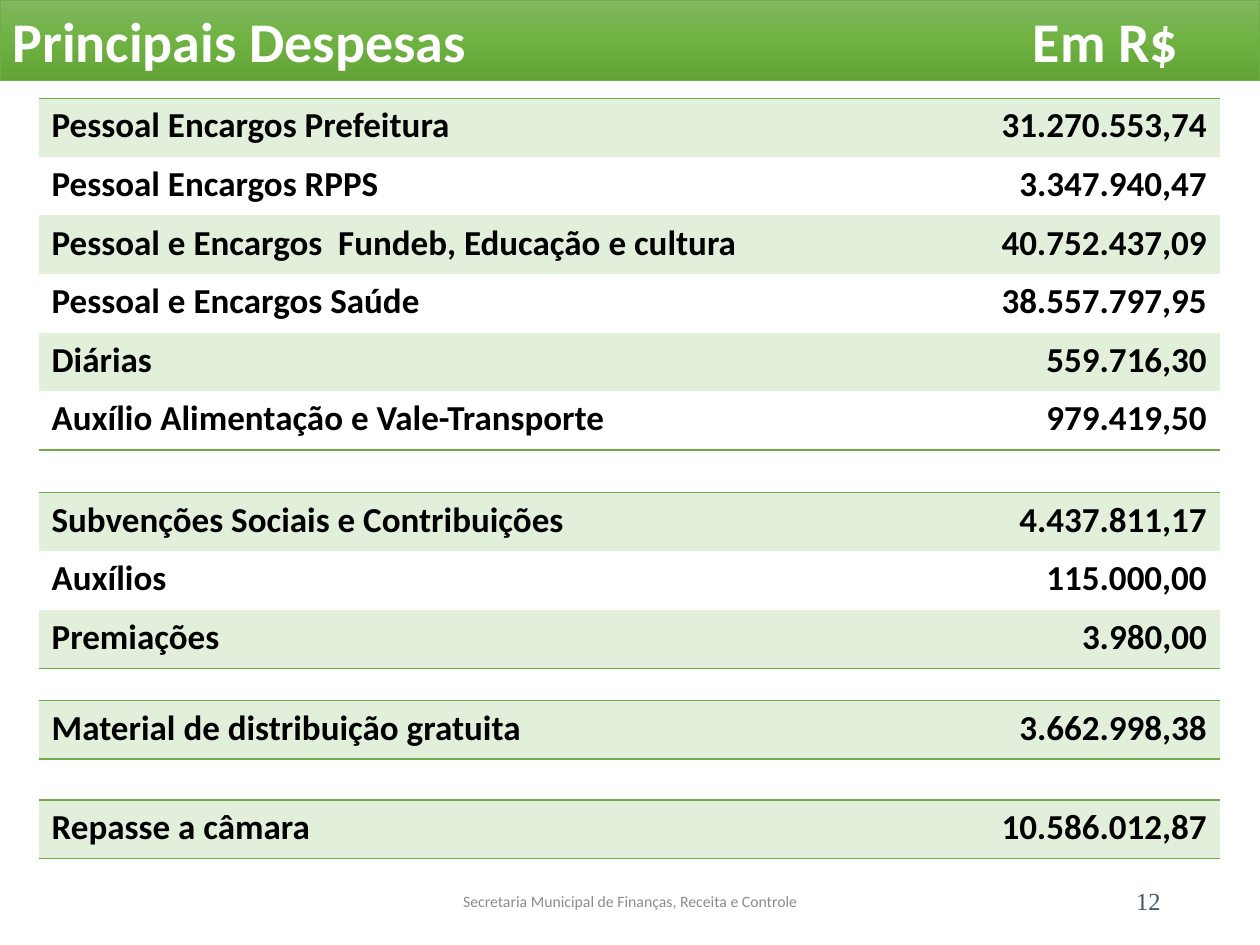
import copy
from dataclasses import dataclass

import lxml.etree
import pptx
import pptx.dml.color
import pptx.enum.shapes
import pptx.enum.text
import pptx.oxml.ns
import pptx.util

Inches = pptx.util.Inches
Pt = pptx.util.Pt
Align = pptx.enum.text.PP_ALIGN
Anchor = pptx.enum.text.MSO_ANCHOR
qn = pptx.oxml.ns.qn

COLOURS = {
    "green": "70AD47",
    "band": "E2EFDA",
    "black": "000000",
    "white": "FFFFFF",
    "footer": "8C8C8C",
    "number": "44546A",
}
TITLE_GRADIENT = [(0, "81B861"), (0.5, "6FB242"), (1, "62A336")]
NO_TABLE_STYLE = "{2D5ABB26-0587-4C30-8999-92F81FD0307C}"
TABLE_LEFT = 0.31
COLUMN_WIDTHS = (7.17, 2.2)
ROW_HEIGHT = 0.465


@dataclass
class ExpenseGroup:
    top: float
    rows: list[tuple[str, str]]


GROUPS = [
    ExpenseGroup(0.78, [
        ("Pessoal Encargos Prefeitura", "31.270.553,74"),
        ("Pessoal Encargos RPPS", "3.347.940,47"),
        ("Pessoal e Encargos  Fundeb, Educação e cultura", "40.752.437,09"),
        ("Pessoal e Encargos Saúde", "38.557.797,95"),
        ("Diárias", "559.716,30"),
        ("Auxílio Alimentação e Vale-Transporte", "979.419,50"),
    ]),
    ExpenseGroup(3.91, [
        ("Subvenções Sociais e Contribuições", "4.437.811,17"),
        ("Auxílios", "115.000,00"),
        ("Premiações", "3.980,00"),
    ]),
    ExpenseGroup(5.56, [("Material de distribuição gratuita", "3.662.998,38")]),
    ExpenseGroup(6.35, [("Repasse a câmara", "10.586.012,87")]),
]


def rgb(value: str) -> pptx.dml.color.RGBColor:
    return pptx.dml.color.RGBColor.from_string(value)


def write_text(frame, text: str, *, size: float, colour: str, bold: bool = False,
               font: str = "Calibri", align=Align.LEFT) -> None:
    para = frame.paragraphs[0]
    para.alignment = align
    span = para.add_run()
    span.text = text
    span.font.name = font
    span.font.size = Pt(size)
    span.font.bold = bold
    span.font.color.rgb = rgb(COLOURS[colour])


def add_label(page, left: float, width: float, text: str, **style) -> None:
    box = page.shapes.add_textbox(Inches(left), Inches(6.95), Inches(width), Inches(0.4))
    box.text_frame.word_wrap = True
    box.text_frame.vertical_anchor = Anchor.MIDDLE
    write_text(box.text_frame, text, **style)


def add_title_bar(page) -> None:
    bar = page.shapes.add_shape(pptx.enum.shapes.MSO_SHAPE.RECTANGLE,
                                0, 0, Inches(10), Inches(0.64))
    bar.shadow.inherit = False
    bar.line.color.rgb = rgb(COLOURS["green"])
    bar.line.width = Pt(0.5)

    # Three-stop gradient, running downwards
    bar.fill.gradient()
    bar.fill.gradient_angle = 270
    stop_list = bar.element.spPr.find(".//" + qn("a:gsLst"))
    stop_list.append(copy.deepcopy(stop_list[0]))
    for stop, (position, colour) in zip(bar.fill.gradient_stops, TITLE_GRADIENT):
        stop.position = position
        stop.color.rgb = rgb(colour)

    # A tab stop places the currency heading
    frame = bar.text_frame
    frame.word_wrap = True
    frame.vertical_anchor = Anchor.TOP
    properties = frame.paragraphs[0]._p.get_or_add_pPr()
    tabs = lxml.etree.SubElement(properties, qn("a:tabLst"))
    lxml.etree.SubElement(tabs, qn("a:tab"), pos=str(Inches(8.1)), algn="l")
    write_text(frame, "Principais Despesas\tEm R$", size=32, colour="white", bold=True)


def add_border(cell, side: str) -> None:
    properties = cell._tc.get_or_add_tcPr()
    line = lxml.etree.Element(qn(f"a:{side}"), w=str(Pt(1)))
    fill = lxml.etree.SubElement(line, qn("a:solidFill"))
    lxml.etree.SubElement(fill, qn("a:srgbClr"), val=COLOURS["green"])
    properties.insert(0, line)


def add_expense_table(page, group: ExpenseGroup) -> None:
    count = len(group.rows)
    frame = page.shapes.add_table(count, 2, Inches(TABLE_LEFT), Inches(group.top),
                                  Inches(sum(COLUMN_WIDTHS)), Inches(ROW_HEIGHT * count))
    table = frame.table
    table.first_row = False
    table.horz_banding = False
    table._tbl.tblPr.find(qn("a:tableStyleId")).text = NO_TABLE_STYLE
    for column, width in zip(table.columns, COLUMN_WIDTHS):
        column.width = Inches(width)

    for index, values in enumerate(group.rows):
        table.rows[index].height = Inches(ROW_HEIGHT)
        for cell, text, align in zip(table.rows[index].cells, values,
                                     (Align.LEFT, Align.RIGHT)):
            write_text(cell.text_frame, text, size=20, colour="black", bold=True, align=align)
            if index % 2 == 0:
                cell.fill.solid()
                cell.fill.fore_color.rgb = rgb(COLOURS["band"])
            else:
                cell.fill.background()
            # Each border goes in front, so the bottom one is added first
            if index == count - 1:
                add_border(cell, "lnB")
            if index == 0:
                add_border(cell, "lnT")


def main() -> None:
    deck = pptx.Presentation()
    deck.slide_width = Inches(10)
    deck.slide_height = Inches(7.5)
    page = deck.slides.add_slide(deck.slide_layouts[6])

    # Heading
    add_title_bar(page)

    # Expense groups
    for group in GROUPS:
        add_expense_table(page, group)

    # Footer and page number
    add_label(page, 3.31, 3.38, "Secretaria Municipal de Finanças, Receita e Controle",
              size=9, colour="footer", align=Align.CENTER)
    add_label(page, 7.06, 2.25, "12", size=14, colour="number",
              font="Times New Roman", align=Align.RIGHT)

    deck.save("out.pptx")


if __name__ == "__main__":
    main()
